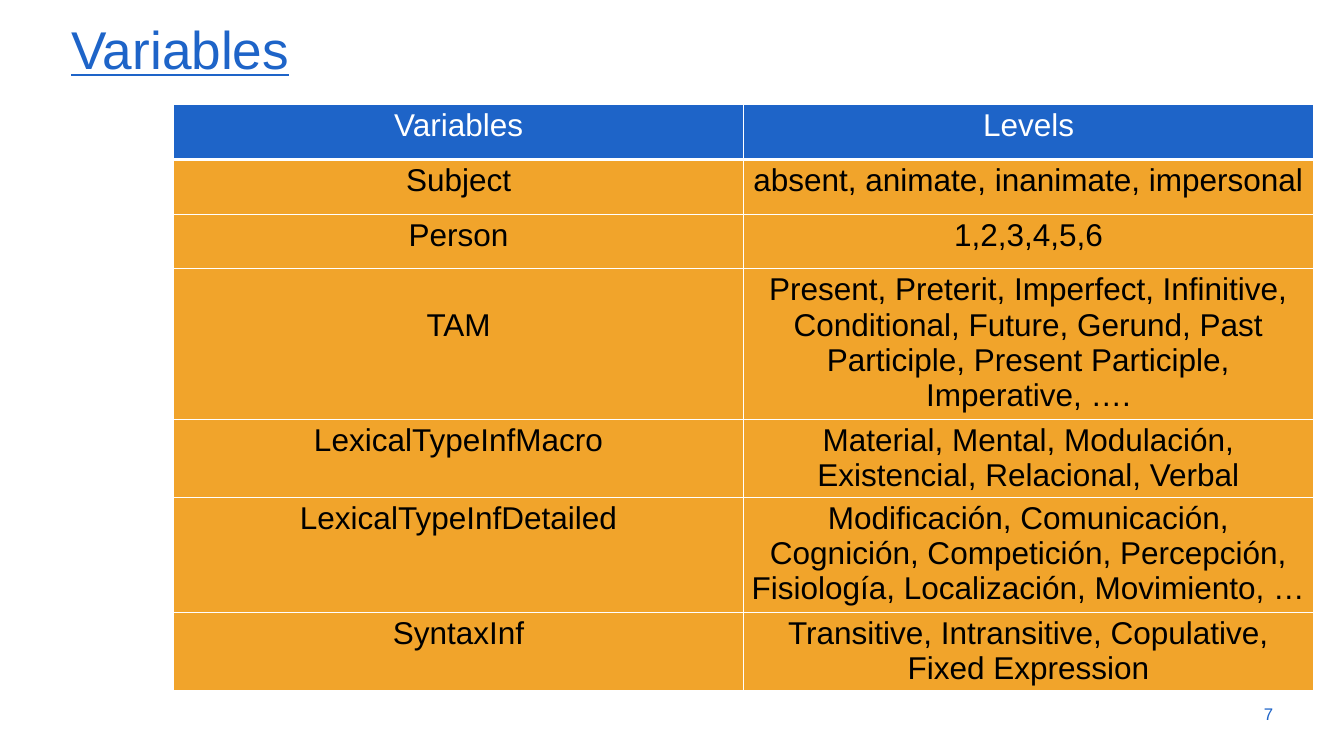
from lxml import etree
from pptx import Presentation
from pptx.dml.color import RGBColor
from pptx.enum.text import MSO_ANCHOR, PP_ALIGN
from pptx.oxml.ns import qn
from pptx.util import Pt

LEFT, MID, RIGHT = PP_ALIGN.LEFT, PP_ALIGN.CENTER, PP_ALIGN.RIGHT
MIDDLE = MSO_ANCHOR.MIDDLE
BLUE, GOLD, WHITE, BLACK = "1E64C8", "F1A42B", "FFFFFF", "000000"

TITLE = "Variables"
PAGE = "7"
ROWS = [
    ("Variables", "Levels", 55.7),
    ("Subject", "absent, animate, inanimate, impersonal", 55.7),
    ("Person", "1,2,3,4,5,6", 55.7),
    ("TAM", "Present, Preterit, Imperfect, Infinitive, Conditional, Future, "
            "Gerund, Past Participle, Present Participle, Imperative, ….", 152.6),
    ("LexicalTypeInfMacro", "Material, Mental, Modulación, Existencial, "
                            "Relacional, Verbal", 79.2),
    ("LexicalTypeInfDetailed", "Modificación, Comunicación, Cognición, Competición, "
                               "Percepción, Fisiología, Localización, Movimiento, …", 117),
    ("SyntaxInf", "Transitive, Intransitive, Copulative, Fixed Expression", 79.2),
]
COL = 578.9
PITCH = 35.9
INSET = 3.6
LOWER = {"TAM": INSET + PITCH}


def color(code):
    return RGBColor.from_string(code)


def write(frame, text, size=32, tint=BLACK, align=MID, line=None, under=None):
    frame.word_wrap = True
    par = frame.paragraphs[0]
    par.alignment = align
    if line:
        par.line_spacing = line
    run = par.add_run()
    run.text = text
    font = run.font
    font.name, font.size = "Arial", Pt(size)
    font.bold, font.underline = False, under
    font.color.rgb = color(tint)


def label(slide, area, text, anchor=None, **style):
    frame = slide.shapes.add_textbox(*map(Pt, area)).text_frame
    if anchor is not None:
        frame.vertical_anchor = anchor
    write(frame, text, **style)


def edge(cell, side, width):
    props = cell._tc.get_or_add_tcPr()
    line = etree.SubElement(props, qn("a:ln" + side), w=str(Pt(width)))
    fill = etree.SubElement(line, qn("a:solidFill"))
    etree.SubElement(fill, qn("a:srgbClr"), val=WHITE)


def grid(slide):
    total = sum(row[-1] for row in ROWS)
    table = slide.shapes.add_table(
        len(ROWS), 2, Pt(176.4), Pt(106.2), Pt(2 * COL), Pt(total)).table
    for col in table.columns:
        col.width = Pt(COL)
    for r, (*texts, height) in enumerate(ROWS):
        table.rows[r].height = Pt(height)
        widths = {"L": 1, "R": 1, "T": 3 if r == 1 else 1, "B": 3 if r == 0 else 1}
        for c, text in enumerate(texts):
            cell = table.cell(r, c)
            for side, width in widths.items():
                edge(cell, side, width)
            cell.fill.solid()
            cell.fill.fore_color.rgb = color(GOLD if r else BLUE)
            cell.margin_top = Pt(LOWER.get(text, INSET))
            cell.margin_bottom = Pt(INSET)
            write(cell.text_frame, text, tint=BLACK if r else WHITE, line=Pt(PITCH))


def main():
    deck = Presentation()
    deck.slide_width, deck.slide_height = Pt(1365.12), Pt(768.24)
    slide = deck.slides.add_slide(deck.slide_layouts[6])
    label(slide, (65.5, 20.2, 1237, 67.7), TITLE,
          size=54, tint=BLUE, align=LEFT, line=0.9, under=True)
    grid(slide)
    label(slide, (1227.6, 704.9, 72.7, 41), PAGE, anchor=MIDDLE,
          size=17.1, tint=BLUE, align=RIGHT)
    deck.save("out.pptx")


if __name__ == "__main__":
    main()
